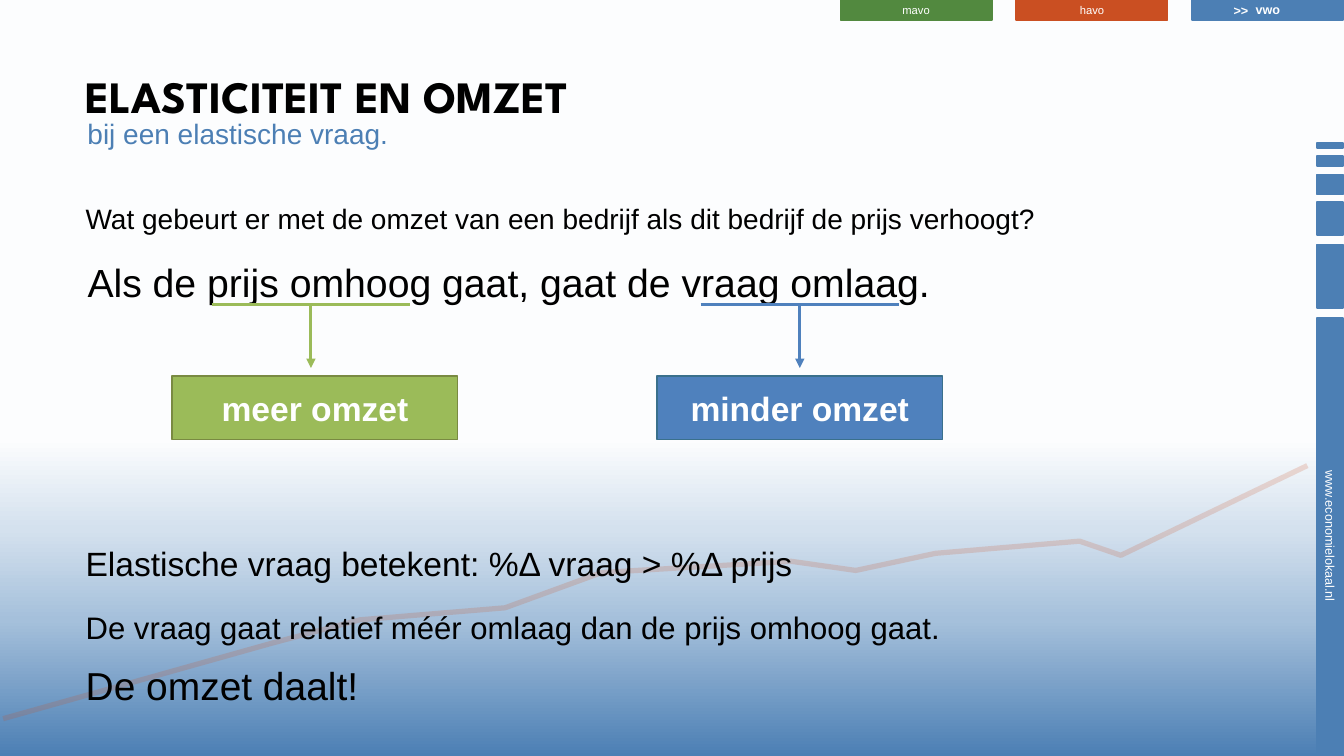
from copy import deepcopy

from lxml import etree
from pptx import Presentation
from pptx.dml.color import RGBColor
from pptx.enum import shapes, text
from pptx.oxml import ns
from pptx.util import Pt

BLACK = RGBColor(0x00, 0x00, 0x00)
WHITE = RGBColor(0xFF, 0xFF, 0xFF)
BLUE = RGBColor(0x4C, 0x7F, 0xB4)
ORANGE = RGBColor(0xCA, 0x4F, 0x22)
GREEN = RGBColor(0x52, 0x89, 0x3F)
LIME = RGBColor(0x9B, 0xBB, 0x59)
LIME_EDGE = RGBColor(0x79, 0x8A, 0x42)
SKY = RGBColor(0x4F, 0x81, 0xBD)
SKY_EDGE = RGBColor(0x3A, 0x70, 0x8C)
GRADIENT = [
    (0, BLUE),
    (0.18, RGBColor(0xA5, 0xC0, 0xDB)),
    (0.30, RGBColor(0xD4, 0xE1, 0xEE)),
    (0.42, RGBColor(0xFC, 0xFD, 0xFE)),
    (0.50, WHITE),
]


def write(paragraph, content, size, color, bold=False, font="Arial"):
    run = paragraph.add_run()
    run.text = content
    run.font.name = font
    run.font.size = Pt(size)
    run.font.bold = bold
    run.font.color.rgb = color


def add_box(left, top, width, height, fill, edge):
    shape = slide.shapes.add_shape(
        shapes.MSO_SHAPE.RECTANGLE, Pt(left), Pt(top), Pt(width), Pt(height))
    shape.shadow.inherit = False
    shape.fill.solid()
    shape.fill.fore_color.rgb = fill
    shape.line.color.rgb = edge
    shape.line.width = Pt(1.25)
    frame = shape.text_frame
    frame.vertical_anchor = text.MSO_ANCHOR.MIDDLE
    frame.paragraphs[0].alignment = text.PP_ALIGN.CENTER
    return shape


presentation = Presentation()
presentation.slide_width = Pt(960)
presentation.slide_height = Pt(540)
slide = presentation.slides.add_slide(presentation.slide_layouts[1])

background = slide.background.fill
background.gradient()
background.gradient_angle = 90
stop_list = slide.element.find(".//" + ns.qn("a:gsLst"))
while len(stop_list) < len(GRADIENT):
    stop_list.append(deepcopy(stop_list[0]))
for stop, (position, color) in zip(background.gradient_stops, GRADIENT):
    stop.position = position
    stop.color.rgb = color

bars = []
for middle, length in [(383, 312), (197.3, 45.4), (156.2, 23.8),
                       (131.8, 14.4), (115.2, 7.2), (103.7, 3.6)]:
    bar = add_box(950 - length / 2, middle - 9.4, length, 18.8, BLUE, BLUE)
    bar.rotation = 90
    bars.append(bar)

tabs = [("mavo", 8, GREEN), ("havo", 8, ORANGE), ("vwo", 9, BLUE)]
labels = [(bars[0], "www.economielokaal.nl", 9, False)]
for index, (level, size, color) in enumerate(tabs):
    tab = add_box(600.4 + 125.6 * index, 0, 108, 14.4, color, color)
    labels.append((tab, level, size, level == "vwo"))
for shape, content, size, bold in labels:
    shape.text_frame.margin_top = 0
    shape.text_frame.margin_bottom = Pt(0.7)
    write(shape.text_frame.paragraphs[0], content, size, WHITE, bold)

trend_points = [(933.8, 332.6), (800.6, 396.7), (771.1, 386.6), (668.2, 395.3),
                (611.3, 407.5), (565.2, 401), (429.8, 409), (360.7, 434.2),
                (257, 442.8), (194.4, 459.4), (2.2, 513.4)]
builder = slide.shapes.build_freeform(Pt(trend_points[0][0]), Pt(trend_points[0][1]))
builder.add_line_segments([(Pt(x), Pt(y)) for x, y in trend_points[1:]], close=False)
trend = builder.convert_to_shape()
trend.shadow.inherit = False
trend.fill.background()
trend.line.color.rgb = ORANGE
trend.line.width = Pt(3.75)
trend_color = trend.element.spPr.find(".//" + ns.qn("a:ln")).find(".//" + ns.qn("a:srgbClr"))
etree.SubElement(trend_color, ns.qn("a:alpha"), val="19000")

marker = slide.shapes.add_textbox(Pt(874.1), Pt(-1.4), Pt(25.2), Pt(18))
marker.text_frame.word_wrap = False
write(marker.text_frame.paragraphs[0], ">>", 9, WHITE, True)

title = slide.shapes.title
body = slide.placeholders[1]
for placeholder, left, top, width, height in [(title, 54, 36, 721.4, 64),
                                              (body, 54, 431, 806.4, 75)]:
    placeholder.left, placeholder.top = Pt(left), Pt(top)
    placeholder.width, placeholder.height = Pt(width), Pt(height)
    placeholder.text_frame.auto_size = text.MSO_AUTO_SIZE.NONE
    placeholder.element.getparent().append(placeholder.element)

title.text_frame.vertical_anchor = text.MSO_ANCHOR.MIDDLE
title.text_frame.paragraphs[0].alignment = text.PP_ALIGN.LEFT
write(title.text_frame.paragraphs[0], "ELASTICITEIT EN OMZET", 32, BLACK, True, "League Spartan")

conclusions = [
    ("De vraag gaat relatief méér omlaag dan de prijs omhoog gaat.", 22.2, 0),
    ("De omzet daalt!", 27.8, 8),
]
body.text_frame.add_paragraph()
for paragraph, (content, size, before) in zip(body.text_frame.paragraphs, conclusions):
    properties = paragraph._p.get_or_add_pPr()
    properties.set("marL", "0")
    properties.set("indent", "0")
    etree.SubElement(properties, ns.qn("a:buNone"))
    paragraph.space_before = Pt(before)
    paragraph.space_after = Pt(3.4)
    write(paragraph, content, size, BLACK)

statements = [
    ("Elastische vraag betekent: %Δ vraag > %Δ prijs", 24, BLACK, 54, 384, 788.4, 36),
    ("Wat gebeurt er met de omzet van een bedrijf als dit bedrijf de prijs verhoogt?",
     20, BLACK, 54, 140.5, 783.4, 38),
    ("Als de prijs omhoog gaat, gaat de vraag omlaag.", 28, BLACK, 54, 181, 618.5, 51),
    ("bij een elastische vraag.", 20, BLUE, 55.4, 79.5, 321, 53),
]
for content, size, color, left, top, width, height in statements:
    statement = slide.shapes.add_textbox(Pt(left), Pt(top), Pt(width), Pt(height))
    statement.text_frame.word_wrap = True
    paragraph = statement.text_frame.paragraphs[0]
    if size == 28:
        paragraph.alignment = text.PP_ALIGN.CENTER
    write(paragraph, content, size, color)

effects = [
    ("meer omzet", LIME, LIME_EDGE, 123.1, 151.2),
    ("minder omzet", SKY, SKY_EDGE, 469.4, 500.4),
]
for content, fill, edge, box_left, line_left in effects:
    effect = add_box(box_left, 268.6, 203.8, 45.4, fill, edge)
    write(effect.text_frame.paragraphs[0], content, 24, WHITE, True)
    middle = line_left + 70.9
    for start_x, end_x, end_y in [(line_left, line_left + 141.8, 217.4),
                                  (middle, middle, 262.8)]:
        connector = slide.shapes.add_connector(
            shapes.MSO_CONNECTOR.STRAIGHT, Pt(start_x), Pt(217.4), Pt(end_x), Pt(end_y))
        connector.line.color.rgb = fill
        connector.line.width = Pt(2.25)
        if start_x == end_x:
            etree.SubElement(connector.line._get_or_add_ln(), ns.qn("a:tailEnd"), type="triangle")
        etree.SubElement(connector.element.spPr, ns.qn("a:effectLst"))

presentation.save("out.pptx")
